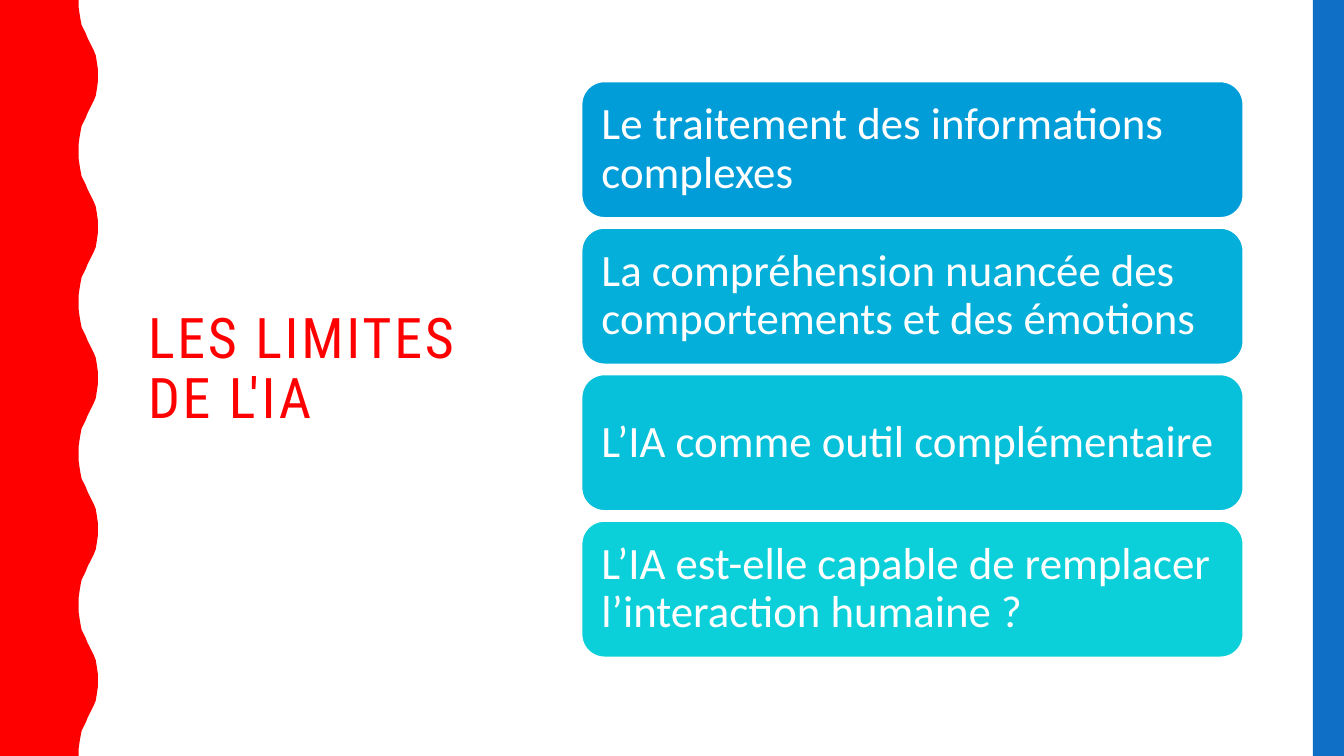
from pptx import Presentation
from pptx.dml.color import RGBColor
from pptx.enum.shapes import MSO_SHAPE
from pptx.enum.text import MSO_ANCHOR, PP_ALIGN
from pptx.util import Inches, Pt

COLORS = {
    "wave": "FF0000", "band": "0F6FC6", "title": "FF0000", "white": "FFFFFF",
    "limit1": "009DD9", "limit2": "04AFD9", "limit3": "07C0D9", "limit4": "0BD0D9",
}
LIMITS = [
    "Le traitement des informations complexes",
    "La compréhension nuancée des comportements et des émotions",
    "L’IA comme outil complémentaire",
    "L’IA est-elle capable de remplacer l’interaction humaine ?",
]
SLIDE_WIDTH, SLIDE_HEIGHT = 13.33, 7.5
WAVE_COUNT = 5
# Half a wave as (x, y), from trough to crest
HALF_WAVE = [
    (0.78, 0), (0.78, 0.07), (0.79, 0.14), (0.8, 0.2), (0.81, 0.25),
    (0.83, 0.29), (0.85, 0.33), (0.87, 0.38), (0.89, 0.42), (0.91, 0.46),
    (0.93, 0.5), (0.95, 0.55), (0.96, 0.61), (0.97, 0.68), (0.97, 0.75),
]
TITLE_FORMAT = {"size": Pt(40), "name": "Roboto Condensed"}
LIMIT_FORMAT = {"size": Pt(32), "name": "Calibri"}


def color(name):
    return RGBColor.from_string(COLORS[name])


def paint(shape, fill, line=None):
    shape.shadow.inherit = False
    shape.fill.solid()
    shape.fill.fore_color.rgb = color(fill)
    if line:
        shape.line.color.rgb = color(line)
        shape.line.width = Pt(1)
    else:
        shape.line.fill.background()


def write(shape, text, font_color, font_format, inset_x, inset_y):
    frame = shape.text_frame
    frame_format = {
        "word_wrap": True, "vertical_anchor": MSO_ANCHOR.MIDDLE,
        "margin_left": Inches(inset_x), "margin_right": Inches(inset_x),
        "margin_top": Inches(inset_y), "margin_bottom": Inches(inset_y),
    }
    for key, value in frame_format.items():
        setattr(frame, key, value)
    paragraph = frame.paragraphs[0]
    paragraph.alignment = PP_ALIGN.LEFT
    paragraph.line_spacing = 0.9
    run = paragraph.add_run()
    run.text = text
    for key, value in font_format.items():
        setattr(run.font, key, value)
    run.font.color.rgb = color(font_color)
    return run


def add_wavy_edge(slide, left, top, height):
    period = height / WAVE_COUNT
    falling = [(x, period - y) for x, y in reversed(HALF_WAVE[:-1])]
    wave = HALF_WAVE + falling
    edge = [(left + x, top + index * period + y)
            for index in range(WAVE_COUNT) for x, y in wave]
    builder = slide.shapes.build_freeform(Inches(left), Inches(top))
    outline = edge + [(left, top + height)]
    builder.add_line_segments([(Inches(x), Inches(y)) for x, y in outline], close=True)
    paint(builder.convert_to_shape(), "wave")


def add_side_band(slide, left, top, width, height):
    band = slide.shapes.add_shape(
        MSO_SHAPE.RECTANGLE, Inches(left), Inches(top), Inches(width), Inches(height))
    paint(band, "band")


def add_title(slide, left, top, width, height):
    title = slide.shapes.add_textbox(
        Inches(left), Inches(top), Inches(width), Inches(height))
    run = write(title, "LES LIMITES DE L'IA", "title", TITLE_FORMAT, 0.1, 0.05)
    run.font._element.set("spc", "200")  # letter spacing of 2 pt


def add_limits(slide, left, top, width, height):
    card_height = 1.35
    pitch = (height - card_height) / (len(LIMITS) - 1)
    for index, text in enumerate(LIMITS):
        card = slide.shapes.add_shape(
            MSO_SHAPE.ROUNDED_RECTANGLE, Inches(left), Inches(top + index * pitch),
            Inches(width), Inches(card_height))
        paint(card, f"limit{index + 1}", "white")
        # The rounded corners already push the text inwards
        write(card, text, "white", LIMIT_FORMAT, 0.13, 0.13)


def main():
    presentation = Presentation()
    presentation.slide_width = Inches(SLIDE_WIDTH)
    presentation.slide_height = Inches(SLIDE_HEIGHT)
    slide = presentation.slides.add_slide(presentation.slide_layouts[6])

    # Decorated edges
    add_wavy_edge(slide, 0, 0, SLIDE_HEIGHT)
    add_side_band(slide, 13.02, 0, 0.31, SLIDE_HEIGHT)

    # Title and list of limits
    add_title(slide, 1.37, 0.71, 3.7, 5.93)
    add_limits(slide, 5.77, 0.81, 6.56, 5.71)

    presentation.save("out.pptx")


if __name__ == "__main__":
    main()
